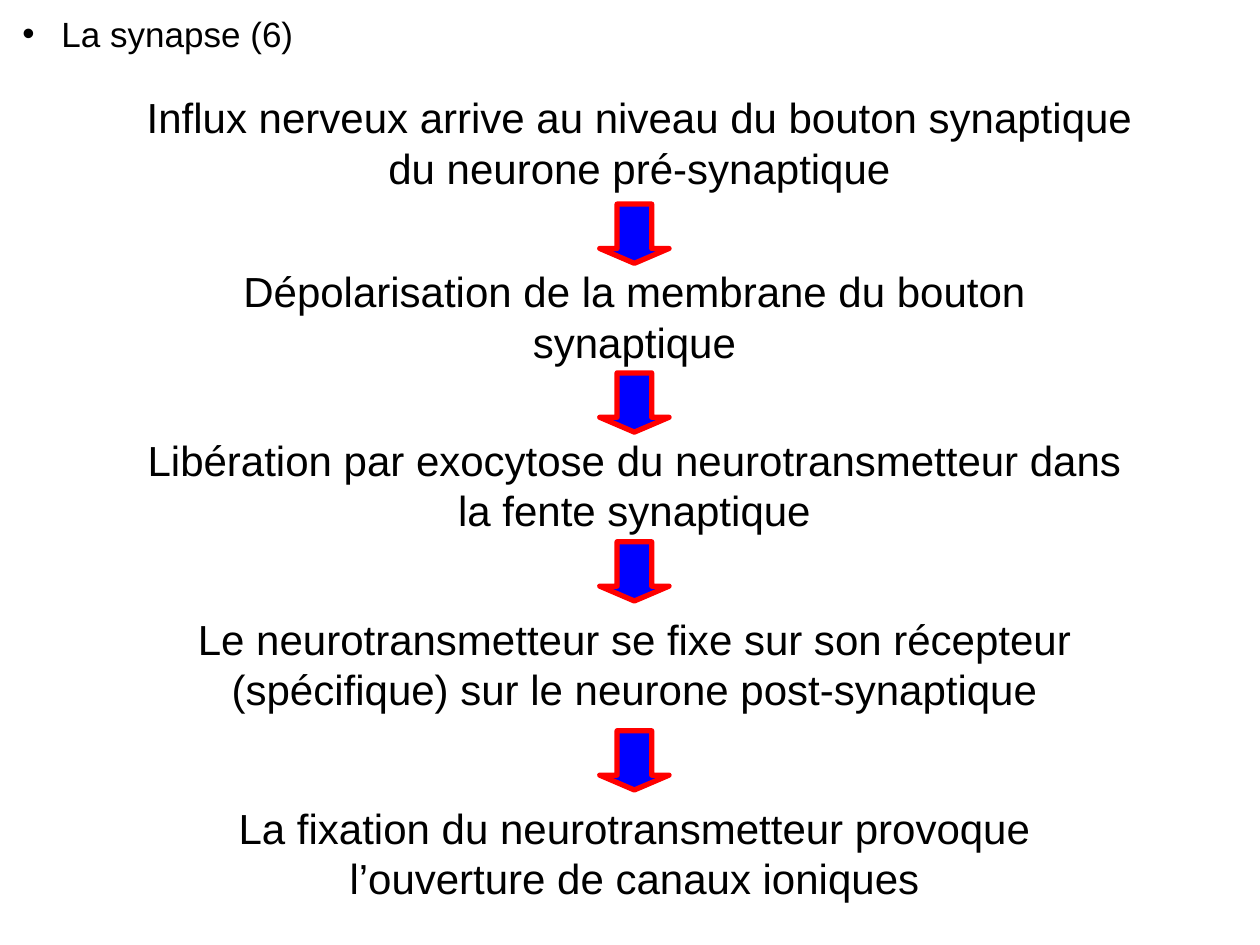
from dataclasses import dataclass

from lxml.etree import SubElement
from pptx import Presentation
from pptx.dml.color import RGBColor
from pptx.enum.shapes import MSO_SHAPE
from pptx.enum.text import MSO_AUTO_SIZE, PP_ALIGN
from pptx.oxml.ns import qn
from pptx.util import Inches, Pt

# Content: each step has its text, top, width and the top of the arrow below it
TITLE = "La synapse (6)"
STEPS = [
    ("Influx nerveux arrive au niveau du bouton synaptique du neurone pré-synaptique",
     0.68, 8.03, 1.62),
    ("Dépolarisation de la membrane du bouton synaptique", 2.06, 7.95, 2.96),
    ("Libération par exocytose du neurotransmetteur dans la fente synaptique",
     3.40, 7.95, 4.30),
    ("Le neurotransmetteur se fixe sur son récepteur (spécifique) "
     "sur le neurone post-synaptique", 4.82, 7.95, 5.80),
    ("La fixation du neurotransmetteur provoque l’ouverture de canaux ioniques",
     6.32, 7.95, None),
]
STEP_LEFT, STEP_WIDTH, STEP_HEIGHT = 1.06, 7.95, 0.9
ARROW_WIDTH, ARROW_HEIGHT = 0.55, 0.47
BULLET_INDENT = 0.31


@dataclass(frozen=True)
class Theme:
    font: str = "Arial"
    title_size: int = 20
    step_size: int = 24
    line_width: int = 3
    text: RGBColor = RGBColor(0, 0, 0)
    fill: RGBColor = RGBColor(0, 0, 255)
    line: RGBColor = RGBColor(255, 0, 0)


THEME = Theme()


def add_text(page, text, area, size, align, bullet=None):
    box = page.shapes.add_textbox(*map(Inches, area))
    frame = box.text_frame
    frame.word_wrap = True
    frame.auto_size = MSO_AUTO_SIZE.SHAPE_TO_FIT_TEXT
    para = frame.paragraphs[0]
    para.alignment = align
    if bullet:
        properties = para._p.get_or_add_pPr()
        indent = Inches(BULLET_INDENT)
        properties.set("marL", str(indent))
        properties.set("indent", str(-indent))
        SubElement(properties, qn("a:buFont"), typeface=THEME.font)
        SubElement(properties, qn("a:buChar"), char=bullet)
    span = para.add_run()
    span.text = text
    span.font.name = THEME.font
    span.font.size = Pt(size)
    span.font.color.rgb = THEME.text


def add_arrow(page, top):
    left = STEP_LEFT + (STEP_WIDTH - ARROW_WIDTH) / 2
    arrow = page.shapes.add_shape(
        MSO_SHAPE.DOWN_ARROW, *map(Inches, (left, top, ARROW_WIDTH, ARROW_HEIGHT)))
    arrow.adjustments[0] = 0.5
    arrow.adjustments[1] = 0.25
    arrow.shadow.inherit = False
    arrow.fill.solid()
    arrow.fill.fore_color.rgb = THEME.fill
    arrow.line.color.rgb = THEME.line
    arrow.line.width = Pt(THEME.line_width)


def main():
    deck = Presentation()
    deck.slide_width, deck.slide_height = Inches(10), Inches(7.5)
    page = deck.slides.add_slide(deck.slide_layouts[6])

    # Title
    add_text(page, TITLE, (0.08, 0.05, 9.8, 0.43), THEME.title_size,
             PP_ALIGN.JUSTIFY, bullet="•")

    # Chain of steps and arrows
    for text, top, width, arrow_top in STEPS:
        add_text(page, text, (STEP_LEFT, top, width, STEP_HEIGHT),
                 THEME.step_size, PP_ALIGN.CENTER)
        if arrow_top is not None:
            add_arrow(page, arrow_top)

    deck.save("out.pptx")


if __name__ == "__main__":
    main()
